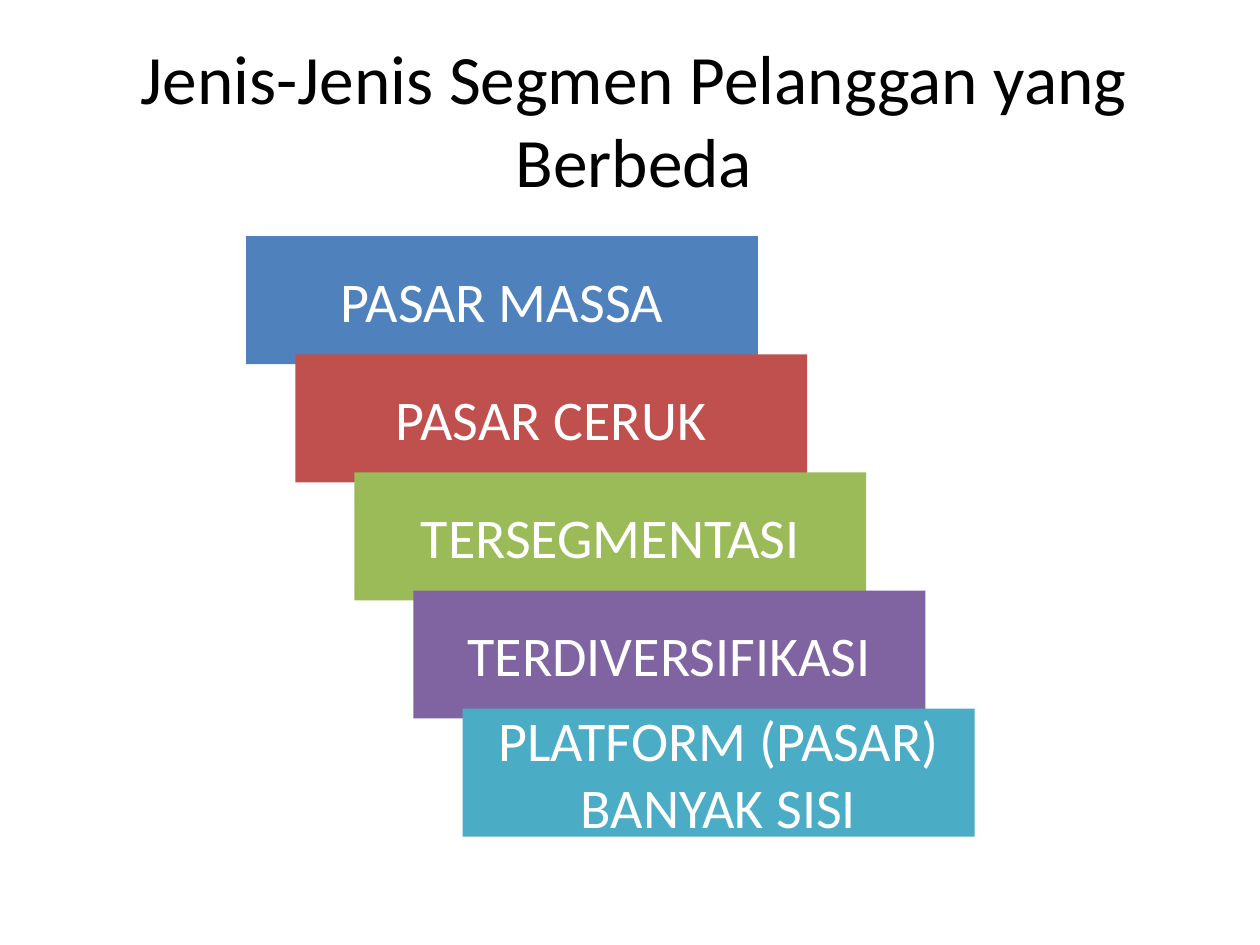
from pptx import Presentation
from pptx.dml.color import RGBColor
from pptx.enum import shapes, text
from pptx.util import Pt


def write_centred(shape, wording, size, colour):
    frame = shape.text_frame
    frame.word_wrap = True
    frame.auto_size = text.MSO_AUTO_SIZE.NONE
    frame.vertical_anchor = text.MSO_ANCHOR.MIDDLE
    paragraph = frame.paragraphs[0]
    paragraph.alignment = text.PP_ALIGN.CENTER
    run = paragraph.add_run()
    run.text = wording
    run.font.color.rgb = RGBColor.from_string(colour)
    for name, value in {"name": "Calibri", "size": Pt(size)}.items():
        setattr(run.font, name, value)


presentation = Presentation()
presentation.slide_width, presentation.slide_height = Pt(720), Pt(540)
slide = presentation.slides.add_slide(presentation.slide_layouts[5])

title = slide.shapes.title
title_box = {"left": 38.25, "top": 22.5, "width": 648, "height": 90}
for name, value in title_box.items():
    setattr(title, name, Pt(value))
write_centred(title, "Jenis-Jenis Segmen Pelanggan yang Berbeda", 39.6, "000000")

# Staircase of segments: label, fill, left edge
segments = [
    ("PASAR MASSA", "4F81BD", 140.63),
    ("PASAR CERUK", "C0504D", 168.75),
    ("TERSEGMENTASI", "9BBB59", 202.5),
    ("TERDIVERSIFIKASI", "8064A2", 236.25),
    ("PLATFORM (PASAR) BANYAK SISI", "4BACC6", 264.38),
]
first_top, step = 135, 67.5
for index, (label, fill, left) in enumerate(segments):
    segment = slide.shapes.add_shape(
        shapes.MSO_SHAPE.RECTANGLE,
        Pt(left), Pt(first_top + index * step), Pt(292.5), Pt(73.13),
    )
    segment.shadow.inherit = False
    segment.fill.solid()
    segment.fill.fore_color.rgb = RGBColor.from_string(fill)
    segment.line.fill.background()
    write_centred(segment, label, 32, "FFFFFF")

presentation.save("out.pptx")
